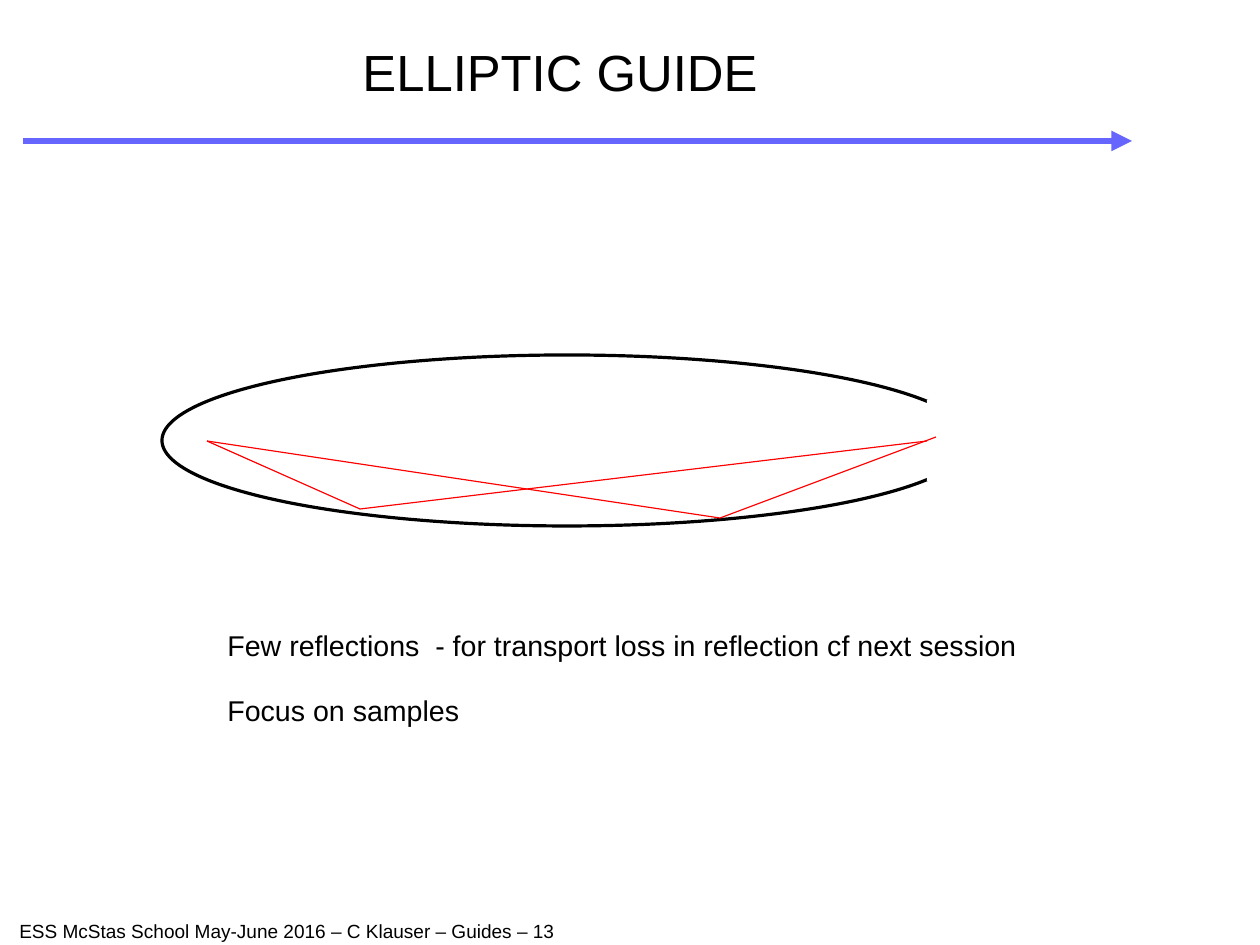
"""Build the slide on the elliptic guide."""
from lxml.etree import SubElement
from pptx import Presentation
from pptx.dml.color import RGBColor
from pptx.enum.shapes import MSO_CONNECTOR, MSO_SHAPE
from pptx.enum.text import MSO_ANCHOR, MSO_AUTO_SIZE, PP_ALIGN
from pptx.oxml.ns import qn
from pptx.util import Pt

TITLE = "ELLIPTIC GUIDE"
NOTES = [
    "Few reflections  - for transport loss in reflection cf next session",
    "Focus on samples",
]
FOOT = "ESS McStas School May-June 2016 – C Klauser – Guides – 13"
COLORS = {"ink": "000000", "rule": "6666FF", "ray": "FF0000", "paper": "FFFFFF"}
FONT = "Arial"
PX = 8000

FOCUS = (207, 441)
RAYS = [
    (FOCUS, (360, 509)),
    ((360, 509), (927, 441)),
    ((720, 518), (936, 437)),
    ((720, 518), FOCUS),
]


def color(name):
    return RGBColor.from_string(COLORS[name])


def scale(*nums):
    return [n * PX for n in nums]


def write(shape, box, lines, size, space=1.0, gap=0):
    shape.left, shape.top, shape.width, shape.height = scale(*box)
    frame = shape.text_frame
    frame.text = "\n".join(lines)
    frame.word_wrap = True
    frame.auto_size = MSO_AUTO_SIZE.NONE
    frame.vertical_anchor = MSO_ANCHOR.TOP
    for i, para in enumerate(frame.paragraphs):
        props = para._p.get_or_add_pPr()
        props.set("marL", "0")
        props.set("indent", "0")
        SubElement(props, qn("a:buNone"))
        para.alignment = PP_ALIGN.LEFT
        para.line_spacing = space
        para.space_before = Pt(gap if i else 0)
        for run in para.runs:
            run.font.name = FONT
            run.font.size = Pt(size)
            run.font.color.rgb = color("ink")


def line(shapes, start, end, name, width):
    link = shapes.add_connector(MSO_CONNECTOR.STRAIGHT, *scale(*start, *end))
    link.line.color.rgb = color(name)
    link.line.width = Pt(width)
    SubElement(link._element.spPr, qn("a:effectLst"))
    return link


def main():
    deck = Presentation()
    deck.slide_width, deck.slide_height = scale(1260, 945)
    slide = deck.slides.add_slide(deck.slide_layouts[1])
    shapes = slide.shapes

    foot = shapes.add_textbox(0, 0, 0, 0)
    write(foot, (8, 914, 914, 31), [FOOT], 12)

    rule = line(shapes, (23, 141), (1132, 141), "rule", 4.31)
    SubElement(rule.line._get_or_add_ln(), qn("a:tailEnd"), type="triangle")

    write(shapes.title, (351, 40, 422, 70), [TITLE], 32, 0.93)

    guide = shapes.add_shape(MSO_SHAPE.OVAL, *scale(162, 355, 810, 171))
    guide.fill.background()
    guide.line.color.rgb = color("ink")
    guide.line.width = Pt(2)
    guide.shadow.inherit = False

    mask = shapes.add_shape(MSO_SHAPE.RECTANGLE, *scale(927, 400, 54, 81))
    mask.fill.solid()
    mask.fill.fore_color.rgb = color("paper")
    mask.line.fill.background()
    mask.shadow.inherit = False

    for start, end in RAYS:
        line(shapes, start, end, "ray", 0.75)

    write(slide.placeholders[1], (216, 625, 820, 109), NOTES, 18, 0.93, 21)
    deck.save("out.pptx")


if __name__ == "__main__":
    main()
